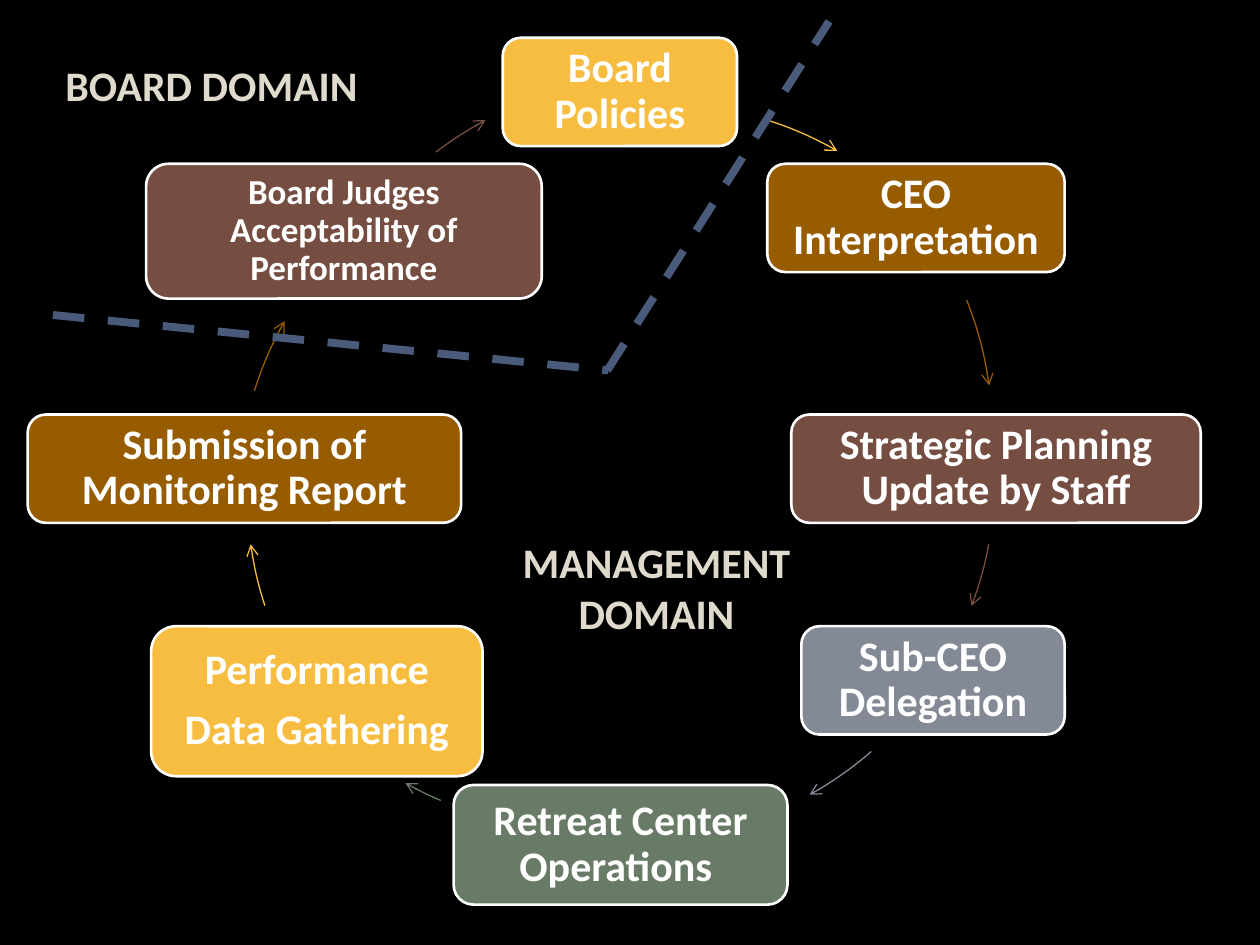
from lxml import etree
from pptx import Presentation
from pptx.dml.color import RGBColor
from pptx.enum.dml import MSO_LINE
from pptx.enum.shapes import MSO_CONNECTOR, MSO_SHAPE
from pptx.enum.text import MSO_ANCHOR, PP_ALIGN
from pptx.oxml.ns import qn
from pptx.util import Inches, Pt

CENTER, LEFT = PP_ALIGN.CENTER, PP_ALIGN.LEFT
MIDDLE, TOP = MSO_ANCHOR.MIDDLE, MSO_ANCHOR.TOP
ROUNDED, ARC = MSO_SHAPE.ROUNDED_RECTANGLE, MSO_SHAPE.ARC
STRAIGHT, DASH = MSO_CONNECTOR.STRAIGHT, MSO_LINE.DASH

THEME = {
    "font": "Calibri", "size": 24, "small": 20,
    "background": "000000", "box text": "FFFFFF", "domain text": "E0DACC",
    "border": "4A5A7A", "gold": "F7BD40", "brown": "975C00",
    "maroon": "754D41", "gray": "838995", "green": "687B66",
}
COLUMNS, ROWS = 10, 7.5
CELL = Inches(1)
ARC_SIZE = 5.97
DEGREE = 0.6  # an adjustment of 1 is 100000 units, a degree is 60000


def color(name):
    return RGBColor.from_string(THEME[name])


def write(shape, lines, size, text_color, frame_format, para_format):
    frame = shape.text_frame
    for name, value in frame_format.items():
        setattr(frame, name, value)
    for index, line in enumerate(lines):
        para = frame.paragraphs[0] if index == 0 else frame.add_paragraph()
        for name, value in para_format.items():
            setattr(para, name, value)
        span = para.add_run()
        span.text = line
        for name, value in {"name": THEME["font"], "size": Pt(size), "bold": True}.items():
            setattr(span.font, name, value)
        span.font.color.rgb = color(text_color)


deck = Presentation()
deck.slide_width, deck.slide_height = int(COLUMNS * CELL), int(ROWS * CELL)
page = deck.slides.add_slide(deck.slide_layouts[6])
page.background.fill.solid()
page.background.fill.fore_color.rgb = color("background")

# Steps clockwise: lines, colour, size, box (left, top, width, height),
# then the arrow to the next step: circle corner, start and end angle
steps = [
    (["Board Policies"], "gold", "size", (3.99, 0.3, 1.86, 0.86), (2.19, 0.81), (287.2, 299.5)),
    (["CEO Interpretation"], "brown", "size", (6.09, 1.3, 2.36, 0.86), (1.91, 0.49), (338.5, 352)),
    (["Strategic Planning Update by Staff"], "maroon", "size",
     (6.28, 3.29, 3.25, 0.86), (1.93, 0.78), (10.7, 20.5)),
    (["Sub-CEO Delegation"], "gray", "size", (6.36, 4.97, 2.09, 0.86), (1.98, 0.72), (49.2, 60.7)),
    (["Retreat Center Operations "], "green", "size",
     (3.6, 6.23, 2.65, 0.95), (1.68, 0.62), (113, 119)),
    (["Performance", "Data Gathering"], "gold", "size",
     (1.2, 4.97, 2.63, 1.19), (1.96, 0.91), (162.2, 171.8)),
    (["Submission of Monitoring Report"], "brown", "size",
     (0.22, 3.29, 3.44, 0.86), (1.88, 1.02), (197.6, 209.2)),
    (["Board Judges Acceptability of Performance"], "maroon", "small",
     (1.16, 1.3, 3.14, 1.07), (2.28, 0.6), (232.8, 241.8)),
]
for lines, fill, size_name, place, corner, angles in steps:
    size = THEME[size_name]
    box = page.shapes.add_shape(ROUNDED, *(int(n * CELL) for n in place))
    box.shadow.inherit = False
    box.fill.solid()
    box.fill.fore_color.rgb = color(fill)
    box.line.color.rgb = color("box text")
    box.line.width = Pt(1.5)
    margin = Pt(size * 0.3)
    sides = ("left", "top", "right", "bottom")
    frame_format = {f"margin_{side}": margin for side in sides}
    frame_format.update(word_wrap=True, vertical_anchor=MIDDLE)
    write(box, lines, size, "box text", frame_format,
          {"alignment": CENTER, "line_spacing": 0.9, "space_after": Pt(size * 0.35)})

    arrow = page.shapes.add_shape(ARC, *(int(n * CELL) for n in (*corner, ARC_SIZE, ARC_SIZE)))
    arrow.shadow.inherit = False
    arrow.fill.background()
    for index, angle in enumerate(angles):
        arrow.adjustments[index] = angle * DEGREE
    arrow.line.color.rgb = color(fill)
    arrow.line.width = Pt(0.75)
    etree.SubElement(arrow.line._get_or_add_ln(), qn("a:tailEnd"), type="arrow")

# Dashed border between the two domains
for ends in [(0.42, 2.5, 4.83, 2.94), (4.82, 2.94, 6.58, 0.17)]:
    border = page.shapes.add_connector(STRAIGHT, *(int(n * CELL) for n in ends))
    border.line.color.rgb = color("border")
    border.line.width = Pt(4.5)
    border.line.dash_style = DASH
    etree.SubElement(border._element.spPr, qn("a:effectLst"))

domains = [
    (["BOARD DOMAIN"], LEFT, (0.42, 0.42, 3.5, 0.5)),
    (["MANAGEMENT", "DOMAIN"], CENTER, (3.92, 4.21, 2.58, 0.91)),
]
for lines, alignment, place in domains:
    label = page.shapes.add_textbox(*(int(n * CELL) for n in place))
    write(label, lines, THEME["size"], "domain text",
          {"word_wrap": True, "vertical_anchor": TOP}, {"alignment": alignment})

deck.save("out.pptx")
